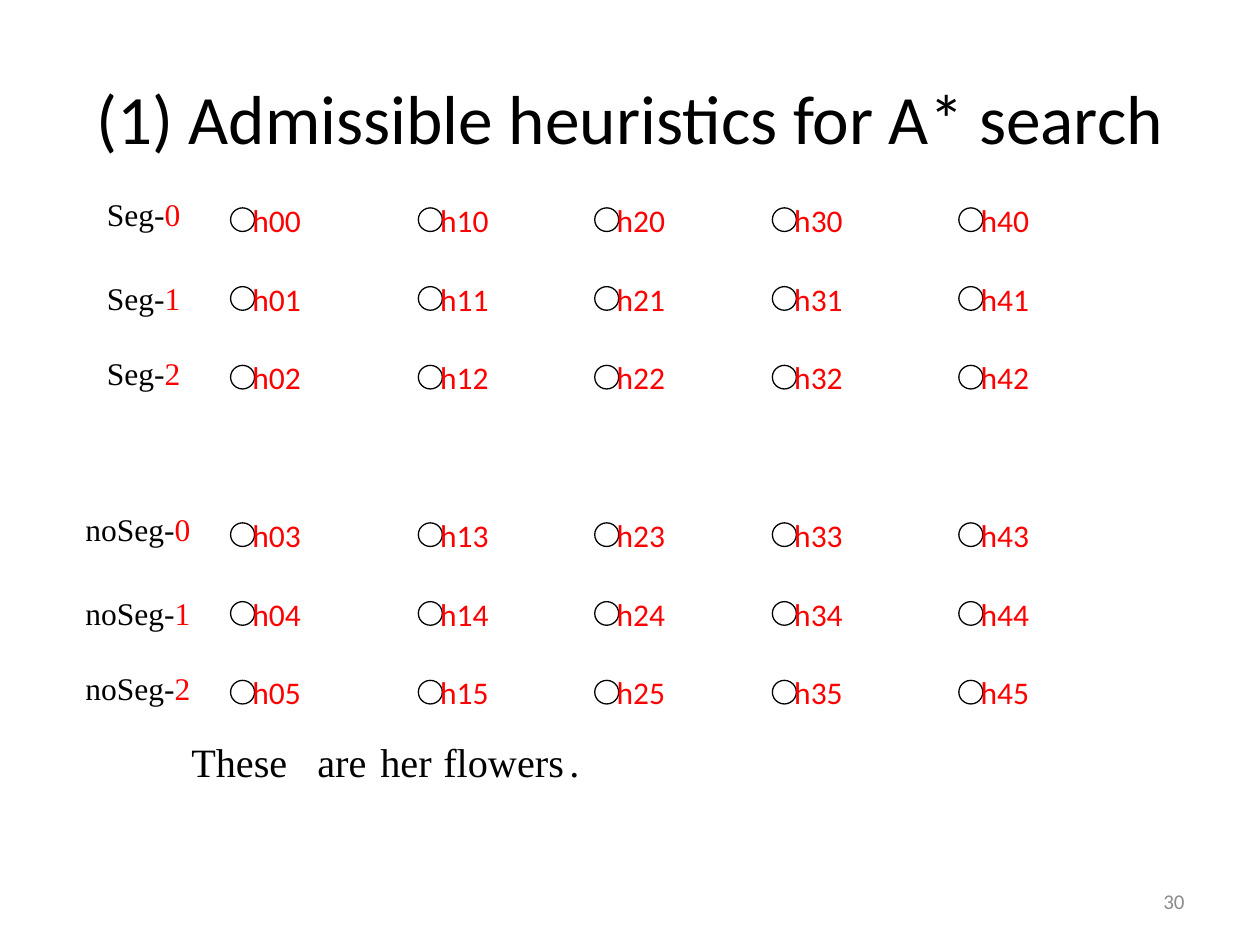
"""Build the slide on admissible heuristics for A* search."""
from dataclasses import dataclass

from lxml import etree
from pptx import Presentation
from pptx.dml.color import RGBColor
from pptx.enum.shapes import MSO_SHAPE
from pptx.enum.text import MSO_ANCHOR, PP_ALIGN
from pptx.oxml.ns import qn
from pptx.slide import Slide
from pptx.util import Inches, Pt

OVAL = MSO_SHAPE.OVAL
TOP, MIDDLE = MSO_ANCHOR.TOP, MSO_ANCHOR.MIDDLE
LEFT, CENTER, RIGHT = PP_ALIGN.LEFT, PP_ALIGN.CENTER, PP_ALIGN.RIGHT

COLORS = {"ink": "000000", "accent": "FF0000", "paper": "FFFFFF", "muted": "8C8C8C"}
SANS, SERIF = "Calibri", "Times New Roman"
WIDTH, HEIGHT = Inches(10), Inches(7.5)
COLUMNS, ROWS = 10, 12

STATE_COLUMNS = [1.83, 3.32, 4.72, 6.13, 7.61]
STATE_ROWS = [2.64 + step for step in (0, 1, 2, 4, 5, 6)]
LABEL_ROWS = [2.4, 3.47, 4.42]
LABEL_GROUPS = [("Seg-", 0.75, 0.83, 0), ("noSeg-", 0.58, 1.08, 4)]
WORDS = ["These", "are", "her", "flowers", "."]
WORD_STOPS = [0.84, 2.57, 3.99, 5.12, 6.96]


def color(name):
    return RGBColor.from_string(COLORS[name])


@dataclass
class HeuristicSlide:
    """Hold the text style and the slide, and draw on a grid of columns and rows."""

    slide: Slide
    body_size: float = 18

    def place(self, column, row, columns, rows):
        unit_x, unit_y = WIDTH / COLUMNS, HEIGHT / ROWS
        return [
            round(length)
            for length in (column * unit_x, row * unit_y, columns * unit_x, rows * unit_y)
        ]

    def fill_text(self, shape, runs, font, size, align, anchor):
        text_frame = shape.text_frame
        text_frame.vertical_anchor = anchor
        paragraph = text_frame.paragraphs[0]
        paragraph.alignment = align
        for text, color_name in runs:
            run = paragraph.add_run()
            run.text = text
            run.font.name = font
            run.font.size = Pt(size)
            run.font.color.rgb = color(color_name)
        return paragraph

    def text(self, box, runs, font, size=None, align=LEFT, anchor=TOP):
        shape = self.slide.shapes.add_textbox(*self.place(*box))
        shape.text_frame.word_wrap = True
        return self.fill_text(shape, runs, font, size or self.body_size, align, anchor)

    def state(self, column, row, name):
        shape = self.slide.shapes.add_shape(OVAL, *self.place(column, row, 0.19, 0.3))
        shape.shadow.inherit = False
        shape.fill.solid()
        shape.fill.fore_color.rgb = color("paper")
        shape.line.color.rgb = color("ink")
        shape.line.width = Pt(0.75)
        shape.text_frame.word_wrap = False
        paragraph = self.fill_text(
            shape, [(name, "accent")], SANS, self.body_size, LEFT, MIDDLE
        )
        paragraph._p.get_or_add_pPr().set("marL", str(Inches(0.11)))

    def sentence(self, box, words, stops):
        paragraph = self.text(box, [("\t".join(words), "ink")], SERIF, 23)
        properties = paragraph._p.get_or_add_pPr()
        properties.set("marL", str(Inches(stops[0])))
        properties.set("indent", "0")
        tabs = etree.SubElement(properties, qn("a:tabLst"))
        for stop in stops[1:]:
            etree.SubElement(tabs, qn("a:tab"), pos=str(Inches(stop)), algn="l")


def main():
    presentation = Presentation()
    presentation.slide_width, presentation.slide_height = WIDTH, HEIGHT
    page = HeuristicSlide(presentation.slides.add_slide(presentation.slide_layouts[6]))

    title = [("(1) Admissible heuristics for A* search", "ink")]
    page.text((0.5, 0.48, 9, 2), title, SANS, 39.6, CENTER, MIDDLE)

    for word_index, column in enumerate(STATE_COLUMNS):
        for state_index, row in enumerate(STATE_ROWS):
            page.state(column, row, f"h{word_index}{state_index}")

    for prefix, column, columns, offset in LABEL_GROUPS:
        for index, row in enumerate(LABEL_ROWS):
            runs = [(prefix, "ink"), (str(index), "accent")]
            page.text((column, row + offset, columns, 0.64), runs, SERIF)

    page.sentence((0.58, 9.28, 7.83, 0.9), WORDS, WORD_STOPS)
    page.text((7.17, 11.12, 2.33, 0.64), [("30", "muted")], SANS, 12, RIGHT, MIDDLE)
    presentation.save("out.pptx")


if __name__ == "__main__":
    main()
